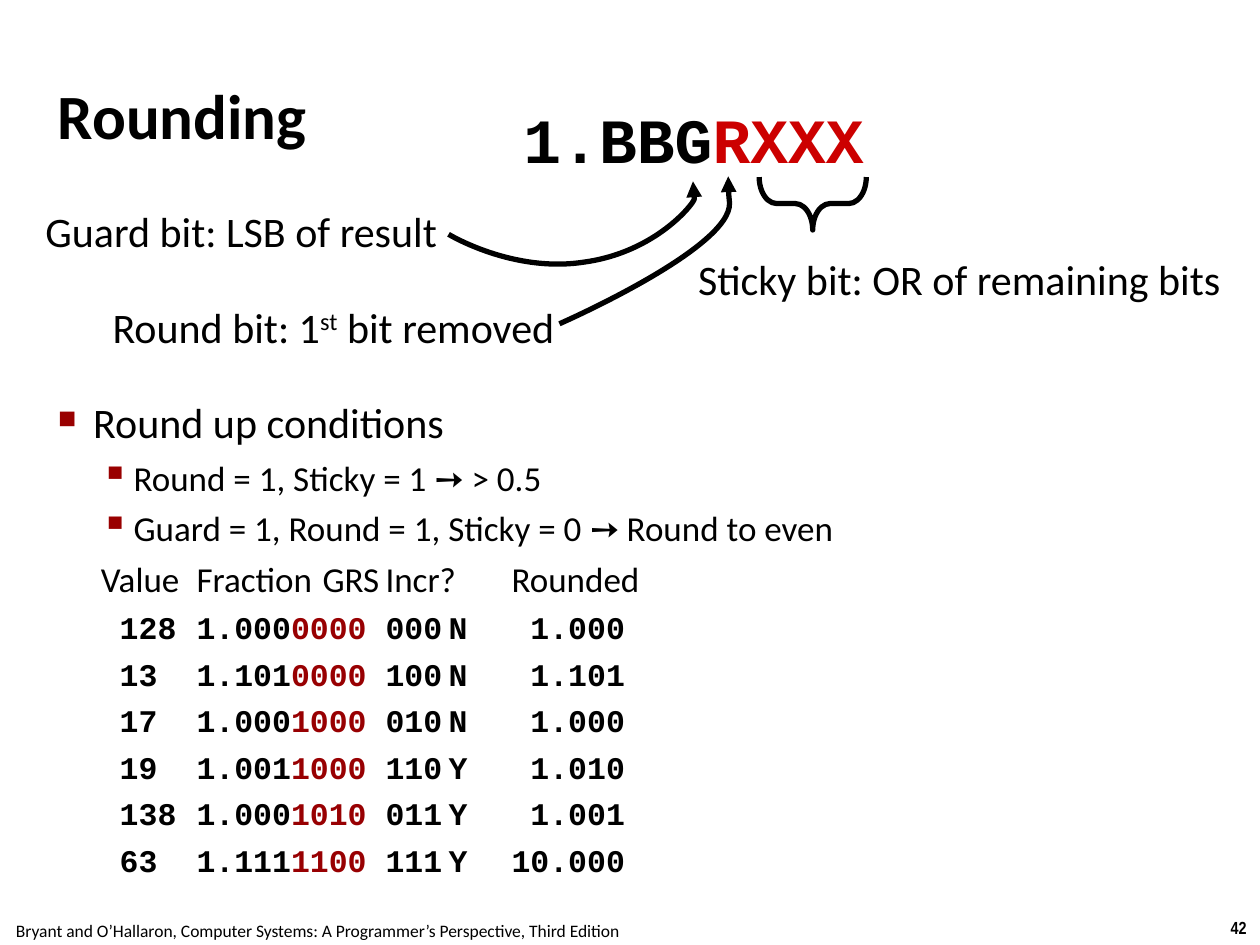
from lxml import etree
from pptx import Presentation
from pptx.dml.color import RGBColor
from pptx.enum.shapes import MSO_SHAPE
from pptx.enum.text import MSO_ANCHOR, PP_ALIGN
from pptx.oxml.ns import qn
from pptx.util import Inches, Pt

LEFT, CENTER, RIGHT = PP_ALIGN.LEFT, PP_ALIGN.CENTER, PP_ALIGN.RIGHT
COLORS = {"black": "000000", "bullet": "990000", "removed": "980002", "bits": "CC0000"}
SANS, MONO, NARROW = "Calibri", "Courier New", "Arial Narrow"

# Content
TITLE = "Rounding"
FOOTER = "Bryant and O’Hallaron, Computer Systems: A Programmer’s Perspective, Third Edition"
PAGE_NUMBER = "42"
HEADING = "Round up conditions"
CONDITIONS = ["Round = 1, Sticky = 1 ➙ > 0.5",
              "Guard = 1, Round = 1, Sticky = 0 ➙ Round to even"]
COLUMNS = ["Value", "Fraction", "GRS", "Incr?", "Rounded"]
# Value, kept fraction, removed fraction, guard/round/sticky, increment, rounded
ROWS = [
    ("128", "1.000", "0000", "000", "N", "1.000"),
    ("13", "1.101", "0000", "100", "N", "1.101"),
    ("17", "1.000", "1000", "010", "N", "1.000"),
    ("19", "1.001", "1000", "110", "Y", "1.010"),
    ("138", "1.000", "1010", "011", "Y", "1.001"),
    ("63", "1.111", "1100", "111", "Y", "10.000"),
]
# Labels: box, alignment, spans of text and superscript flag
LABELS = [
    ((0.16, 1.59, 3.35, 0.49), RIGHT, [("Guard bit: LSB of result", False)]),
    ((0.73, 2.35, 3.71, 0.49), RIGHT,
     [("Round bit: 1", False), ("st", True), (" bit removed", False)]),
    ((5.5, 1.97, 4.36, 0.49), LEFT, [("Sticky bit: OR of remaining bits", False)]),
]
# Arrows: start point, then two control points and an end point per curve
ARROWS = [
    [(4.44, 2.57), (4.44, 2.57), (5.81, 1.97), (5.79, 1.61),
     (5.78, 1.5), (5.78, 1.45), (5.78, 1.4)],
    [(3.56, 1.86), (3.56, 1.86), (4.07, 2.17), (4.64, 2.08),
     (5.21, 2), (5.51, 1.61), (5.51, 1.58), (5.51, 1.56), (5.5, 1.44), (5.5, 1.44)],
]


def color(name):
    return RGBColor.from_string(COLORS[name])


def set_font(font, size, name=SANS, bold=False):
    font.size, font.name, font.bold = Pt(size), name, bold
    font.color.rgb = color("black")


def set_margins(frame, inset=0.04):
    frame.margin_left = frame.margin_right = Inches(inset)
    frame.margin_top = frame.margin_bottom = Inches(inset)


def add_text(page, place, align=LEFT, wrap=False):
    frame = page.shapes.add_textbox(*map(Inches, place)).text_frame
    frame.word_wrap = wrap
    set_margins(frame)
    frame.paragraphs[0].alignment = align
    return frame


def add_span(para, text, color_name=None):
    span = para.add_run()
    span.text = text
    if color_name:
        span.font.color.rgb = color(color_name)
    return span


def indent(para, margin, hanging, before):
    para.space_before = Pt(before)
    props = para._p.get_or_add_pPr()
    props.set("marL", str(Inches(margin)))
    props.set("indent", str(-Inches(hanging)))
    return props


def add_bullet(props, char, percent):
    tint = etree.SubElement(props, qn("a:buClr"))
    etree.SubElement(tint, qn("a:srgbClr"), val=COLORS["bullet"])
    etree.SubElement(props, qn("a:buSzPct"), val=str(percent * 1000))
    etree.SubElement(props, qn("a:buChar"), char=char)


def add_item(frame, size=20, name=SANS, bold=False):
    para = frame.add_paragraph()
    para.level = 1
    props = indent(para, 0.6, 0.26, 5)
    set_font(para.font, size, name, bold)
    return para, props


def style_outline(shape):
    shape.shadow.inherit = False
    shape.fill.background()
    shape.line.color.rgb = color("black")
    shape.line.width = Pt(3)


def add_curved_arrow(page, points):
    builder = page.shapes.build_freeform(*points[0], scale=Inches(1))
    builder = page.shapes.build_freeform(*(Inches(v) for v in points[0]))
    builder.add_line_segments([(Inches(x), Inches(y)) for x, y in points[1:]], close=False)
    arrow = builder.convert_to_shape()
    style_outline(arrow)
    # Turn each three line segments into one Bezier curve
    segments = list(arrow._element.iter(qn("a:lnTo")))
    outline = segments[0].getparent()
    for first in range(0, len(segments), 3):
        curve = etree.SubElement(outline, qn("a:cubicBezTo"))
        for segment in segments[first:first + 3]:
            curve.append(segment[0])
            outline.remove(segment)
    etree.SubElement(arrow.line._get_or_add_ln(), qn("a:tailEnd"), type="triangle")


def main():
    deck = Presentation()
    deck.slide_width, deck.slide_height = Inches(10), Inches(7.5)
    page = deck.slides.add_slide(deck.slide_layouts[5])

    # Title
    title = page.shapes.title
    title.left, title.top, title.width, title.height = map(Inches, (0.42, 0.28, 9.17, 1.25))
    title.text_frame.text = TITLE
    title.text_frame.vertical_anchor = MSO_ANCHOR.MIDDLE
    set_margins(title.text_frame)
    title.text_frame.paragraphs[0].alignment = LEFT
    set_font(title.text_frame.paragraphs[0].font, 36, bold=True)

    # Footer and page number
    for place, text, name in [((-0.02, 7.25, 5.08, 0.27), FOOTER, SANS),
                              ((9.66, 7.23, 0.34, 0.27), PAGE_NUMBER, NARROW)]:
        frame = add_text(page, place, CENTER)
        set_margins(frame, 0.05)
        frame.paragraphs[0].text = text
        set_font(frame.paragraphs[0].font, 10, name, bold=name == NARROW)

    # Conditions
    body = add_text(page, (0.42, 3.11, 9.17, 4.36), wrap=True)
    heading = body.paragraphs[0]
    heading.text = HEADING
    set_font(heading.font, 24)
    add_bullet(indent(heading, 0.28, 0.28, 6), "■", 60)
    for condition in CONDITIONS:
        para, props = add_item(body)
        para.text = condition
        add_bullet(props, "▪", 110)

    # Tabbed examples
    add_item(body)[0].text = "\t".join(COLUMNS)
    for value, kept, removed, bits, increment, rounded in ROWS:
        para, _ = add_item(body, 18, MONO, True)
        add_span(para, f" {value}\t{kept}")
        add_span(para, f"{removed}\t", "removed")
        add_span(para, f"{bits}\t{increment}\t{rounded:>6}")

    # Bit pattern
    pattern = add_text(page, (4.1, 0.76, 2.81, 0.69), CENTER).paragraphs[0]
    set_font(pattern.font, 36, MONO, True)
    add_span(pattern, "1.BBG")
    add_span(pattern, "RXXX", "bits")

    # Labels
    for place, align, spans in LABELS:
        para = add_text(page, place, align).paragraphs[0]
        set_font(para.font, 24)
        for text, raised in spans:
            span = add_span(para, text)
            if raised:
                span.font._element.set("baseline", "30000")

    # Brace under the sticky bits, tip pointing down
    brace = page.shapes.add_shape(MSO_SHAPE.LEFT_BRACE, *map(Inches, (6.24, 1.19, 0.42, 0.85)))
    brace.rotation = 270
    brace.adjustments[0] = 0.33
    style_outline(brace)

    # Arrows from labels to bits
    for points in ARROWS:
        add_curved_arrow(page, points)

    deck.save("out.pptx")


if __name__ == "__main__":
    main()
